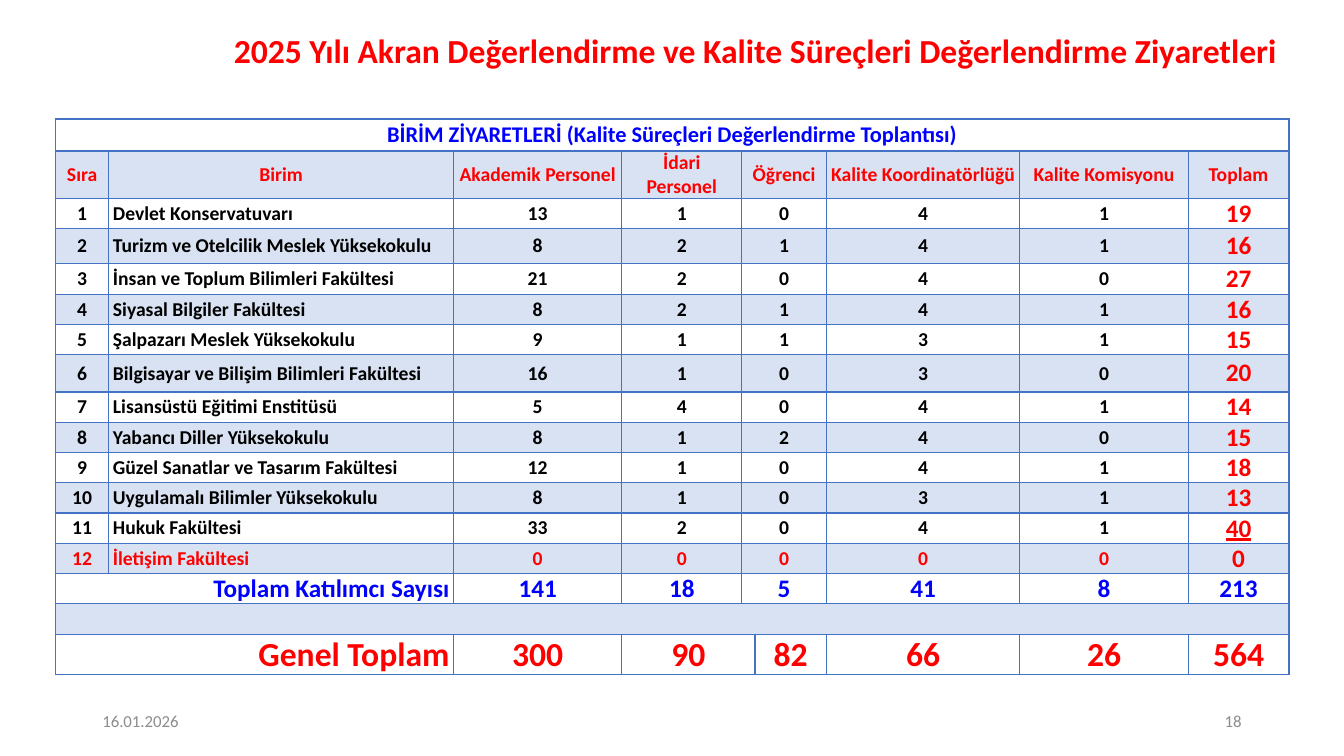
import pptx
import pptx.dml.color
import pptx.enum.text
import pptx.oxml
import pptx.oxml.ns
import pptx.util
from dataclasses import dataclass

Pt = pptx.util.Pt
ALIGN = pptx.enum.text.PP_ALIGN
MIDDLE = pptx.enum.text.MSO_ANCHOR.MIDDLE


@dataclass(frozen=True)
class Theme:
    font: str = "Calibri"
    red: str = "FF0000"
    blue: str = "0000FF"
    black: str = "000000"
    grey: str = "8C8C8C"
    accent: str = "4472C4"
    band_opacity: int = 20
    footer: int = 12
    body: int = 14
    caption: int = 16
    total: int = 18
    heading: int = 24


THEME = Theme()

TITLE = "2025 Yılı Akran Değerlendirme ve Kalite Süreçleri Değerlendirme Ziyaretleri"
CAPTION = "BİRİM ZİYARETLERİ (Kalite Süreçleri Değerlendirme Toplantısı)"
HEADINGS = ["Sıra", "Birim", "Akademik Personel", "İdari Personel", "Öğrenci",
            "Kalite Koordinatörlüğü", "Kalite Komisyonu", "Toplam"]
UNITS = [
    ("Devlet Konservatuvarı", 13, 1, 0, 4, 1),
    ("Turizm ve Otelcilik Meslek Yüksekokulu", 8, 2, 1, 4, 1),
    ("İnsan ve Toplum Bilimleri Fakültesi", 21, 2, 0, 4, 0),
    ("Siyasal Bilgiler Fakültesi", 8, 2, 1, 4, 1),
    ("Şalpazarı Meslek Yüksekokulu", 9, 1, 1, 3, 1),
    ("Bilgisayar ve Bilişim Bilimleri Fakültesi", 16, 1, 0, 3, 0),
    ("Lisansüstü Eğitimi Enstitüsü", 5, 4, 0, 4, 1),
    ("Yabancı Diller Yüksekokulu", 8, 1, 2, 4, 0),
    ("Güzel Sanatlar ve Tasarım Fakültesi", 12, 1, 0, 4, 1),
    ("Uygulamalı Bilimler Yüksekokulu", 8, 1, 0, 3, 1),
    ("Hukuk Fakültesi", 33, 2, 0, 4, 1),
    ("İletişim Fakültesi", 0, 0, 0, 0, 0),
]
GRAND_TOTALS = [300, 90, 82, 66, 26, 564]

COLUMN_WIDTHS = [38.2, 246.2, 120.2, 85.7, 9.4, 51.1, 138.2, 120.2, 72]
ROW_HEIGHTS = [23, 27.4, 20.2, 25.2, 20.2, 20.2, 20.2, 26.6] + [20.2] * 7 + [13.7, 23]

# Grid columns taken by each cell of a row
FULL_SPAN = (9,)
UNIT_SPANS = (1, 1, 1, 1, 2, 1, 1, 1)
TOTAL_SPANS = (2, 1, 1, 2, 1, 1, 1)
GRAND_SPANS = (2, 1, 2, 1, 1, 1, 1)


def write(frame, text, size=THEME.body, color=THEME.black, bold=True, underline=None,
          align=ALIGN.CENTER, after=None, line_spacing=None):
    paragraph = frame.paragraphs[0]
    paragraph.alignment = align
    if after is not None:
        paragraph.space_after = Pt(after)
    if line_spacing is not None:
        paragraph.line_spacing = line_spacing
    run = paragraph.add_run()
    run.text = str(text)
    run.font.name = THEME.font
    run.font.size = Pt(size)
    run.font.bold = bold
    run.font.underline = underline
    run.font.color.rgb = pptx.dml.color.RGBColor.from_string(color)


def add_title(slide, left, top, width, height):
    title = slide.shapes.title
    title.left, title.top, title.width, title.height = map(Pt, (left, top, width, height))
    title.text_frame.vertical_anchor = MIDDLE
    title.text_frame.word_wrap = True
    write(title.text_frame, TITLE, size=THEME.heading, color=THEME.red, line_spacing=0.9)


def add_footer(slide, left, top, width, height):
    field_width = 216
    fields = [("16.01.2026", left, ALIGN.LEFT),
              ("18", left + width - field_width, ALIGN.RIGHT)]
    for text, field_left, align in fields:
        field = slide.shapes.add_textbox(Pt(field_left), Pt(top), Pt(field_width), Pt(height))
        field.text_frame.word_wrap = True
        field.text_frame.vertical_anchor = MIDDLE
        write(field.text_frame, text, size=THEME.footer, color=THEME.grey,
              bold=False, align=align)


def style_cell(cell, banded, top=1, bottom=1):
    cell.margin_left = cell.margin_right = Pt(2.9)
    cell.margin_top = cell.margin_bottom = 0
    cell.vertical_anchor = MIDDLE
    properties = cell._tc.get_or_add_tcPr()
    for side, weight in (("L", 1), ("R", 1), ("T", top), ("B", bottom)):
        properties.append(pptx.oxml.parse_xml(
            f'<a:ln{side} {pptx.oxml.ns.nsdecls("a")} w="{Pt(weight)}"><a:solidFill>'
            f'<a:srgbClr val="{THEME.accent}"/></a:solidFill></a:ln{side}>'))
    if not banded:
        cell.fill.background()
        return
    cell.fill.solid()
    cell.fill.fore_color.rgb = pptx.dml.color.RGBColor.from_string(THEME.accent)
    tint = properties.find(".//" + pptx.oxml.ns.qn("a:solidFill") + "[last()]")
    tint = properties.findall(pptx.oxml.ns.qn("a:solidFill"))[-1][0]
    tint.append(pptx.oxml.parse_xml(
        f'<a:alpha {pptx.oxml.ns.nsdecls("a")} val="{THEME.band_opacity * 1000}"/>'))


def fill_row(table, row, spans, values, formats):
    column = 0
    for span, value, cell_format in zip(spans, values, formats):
        cell = table.cell(row, column)
        if span > 1:
            cell.merge(table.cell(row, column + span - 1))
        if value is not None:
            write(cell.text_frame, value, after=4, **cell_format)
        column += span


def add_visits_table(slide, left, top, width, height):
    table = slide.shapes.add_table(len(ROW_HEIGHTS), len(COLUMN_WIDTHS), Pt(left), Pt(top),
                                   Pt(width), Pt(height)).table
    table.first_row = table.horz_banding = False
    for column, column_width in zip(table.columns, COLUMN_WIDTHS):
        column.width = Pt(column_width)
    for index, (row, row_height) in enumerate(zip(table.rows, ROW_HEIGHTS)):
        row.height = Pt(row_height)
        for cell in row.cells:
            style_cell(cell, banded=index % 2 == 1, top=2 if index == 1 else 1,
                       bottom=2 if index == 0 else 1)

    # Caption and column headings
    fill_row(table, 0, FULL_SPAN, [CAPTION], [dict(size=THEME.caption, color=THEME.blue)])
    fill_row(table, 1, UNIT_SPANS, HEADINGS, [dict(color=THEME.red)] * len(HEADINGS))

    # Visited units, with the largest total underlined
    largest = max(sum(counts) for _, *counts in UNITS)
    for number, (unit, *counts) in enumerate(UNITS, start=1):
        total = sum(counts)
        plain = dict(color=THEME.black if total else THEME.red)
        emphasis = dict(size=THEME.total, color=THEME.red, underline=total == largest or None)
        formats = [plain, dict(plain, align=ALIGN.LEFT)] + [plain] * len(counts) + [emphasis]
        fill_row(table, number + 1, UNIT_SPANS, [number, unit, *counts, total], formats)

    # Participant totals, empty band and grand totals
    totals = [sum(counts) for counts in zip(*(unit[1:] for unit in UNITS))]
    totals.append(sum(totals))
    last = len(ROW_HEIGHTS) - 1
    summaries = [
        (last - 2, TOTAL_SPANS, "Toplam Katılımcı Sayısı", totals, THEME.total, THEME.blue),
        (last, GRAND_SPANS, "Genel Toplam", GRAND_TOTALS, THEME.heading, THEME.red),
    ]
    for row, spans, label, values, size, color in summaries:
        number_format = dict(size=size, color=color)
        formats = [dict(number_format, align=ALIGN.RIGHT)] + [number_format] * len(values)
        fill_row(table, row, spans, [label, *values], formats)
    fill_row(table, last - 1, FULL_SPAN, [None], [{}])


def main():
    presentation = pptx.Presentation()
    presentation.slide_width, presentation.slide_height = Pt(960), Pt(540)
    slide = presentation.slides.add_slide(presentation.slide_layouts[5])
    add_title(slide, 140.4, 13.7, 798.5, 47.5)
    add_footer(slide, 66, 500.5, 828, 28.8)
    add_visits_table(slide, 39.6, 85, sum(COLUMN_WIDTHS), sum(ROW_HEIGHTS))
    presentation.save("out.pptx")


if __name__ == "__main__":
    main()
